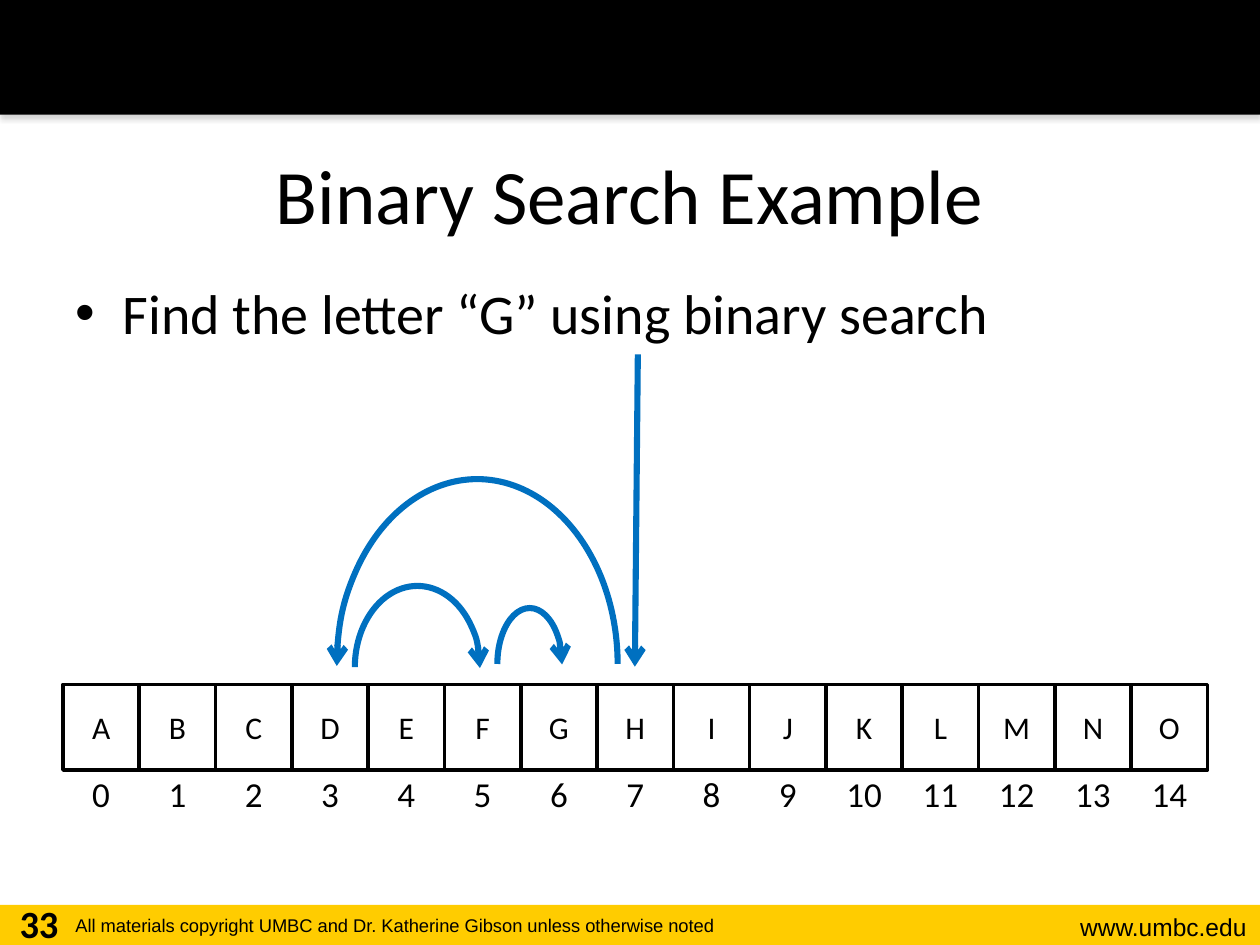
import lxml.etree
import pptx
import pptx.dml.color
import pptx.enum.shapes
import pptx.enum.text
import pptx.oxml
import pptx.oxml.ns
import pptx.util

Pt = pptx.util.Pt
Shape = pptx.enum.shapes.MSO_SHAPE
Align = pptx.enum.text.PP_ALIGN
Anchor = pptx.enum.text.MSO_ANCHOR

BLACK, WHITE, GOLD, BLUE = "000000", "FFFFFF", "FFCC00", "0070C0"
LETTERS = "ABCDEFGHIJKLMNO"
ROW_LEFT, CELL_WIDTH, CELL_HEIGHT = 36, 43.6, 49
LETTER_TOP, INDEX_TOP = 391, 429.1
ARC_ANGLES = (108.06, 0.44)


def color(value):
    return pptx.dml.color.RGBColor.from_string(value)


def add_xml(parent, tag, **attributes):
    return lxml.etree.SubElement(parent, pptx.oxml.ns.qn(tag), attributes)


def write(shape, text, size, font="Calibri", align=Align.LEFT,
          anchor=Anchor.TOP, bold=False):
    frame = shape.text_frame
    frame.word_wrap = True
    frame.vertical_anchor = anchor
    para = frame.paragraphs[0]
    para.text = text
    para.alignment = align
    para.font.size = Pt(size)
    para.font.name = font
    para.font.bold = bold
    para.font.color.rgb = color(BLACK)
    return para


def add_text(page, bounds, text, size, **style):
    box = page.shapes.add_textbox(*map(Pt, bounds))
    return write(box, text, size, **style)


def add_rectangle(page, bounds, fill, outline=None):
    rectangle = page.shapes.add_shape(Shape.RECTANGLE, *map(Pt, bounds))
    rectangle.shadow.inherit = False
    rectangle.fill.solid()
    rectangle.fill.fore_color.rgb = color(fill)
    if outline:
        rectangle.line.color.rgb = color(outline)
        rectangle.line.width = Pt(2)
    else:
        rectangle.line.fill.background()
    return rectangle


def add_banner(page):
    banner = add_rectangle(page, (0, 0, 720, 65.5), BLACK)
    effects = banner._element.spPr.find(pptx.oxml.ns.qn("a:effectLst"))
    shadow = add_xml(effects, "a:outerShdw", blurRad=str(Pt(3.1)),
                     dist=str(Pt(1.8)), dir="5400000", rotWithShape="0")
    tint = add_xml(shadow, "a:srgbClr", val="808080")
    add_xml(tint, "a:alpha", val="35000")


def add_footer(page):
    add_rectangle(page, (0, 517, 720, 23), GOLD)
    add_text(page, (576, 517.5, 143.5, 24.5), "www.umbc.edu", 14,
             font="Arial", align=Align.RIGHT)
    add_text(page, (36, 519, 472, 21),
             "All materials copyright UMBC and Dr. Katherine Gibson "
             "unless otherwise noted", 10.5, font="Arial")
    add_text(page, (0, 511, 44.6, 29), "33", 22, align=Align.CENTER, bold=True)


def add_title(page, text):
    title = page.shapes.title
    title.left, title.top, title.width, title.height = map(
        Pt, (36, 65.5, 648, 90))
    write(title, text, 44, align=Align.CENTER, anchor=Anchor.MIDDLE)


def add_bullet(page, text):
    box = page.shapes.add_textbox(*map(Pt, (36, 155.5, 648, 356)))
    properties = box.text_frame.paragraphs[0]._p.get_or_add_pPr()
    properties.set("marL", str(Pt(27)))
    properties.set("indent", str(Pt(-27)))
    add_xml(properties, "a:buFont", typeface="Arial")
    add_xml(properties, "a:buChar", char="•")
    write(box, text, 32)


def add_cells(page, labels, top, size, outline):
    for column, label in enumerate(labels):
        left = ROW_LEFT + column * CELL_WIDTH
        cell = add_rectangle(
            page, (left, top, CELL_WIDTH, CELL_HEIGHT), WHITE, outline)
        cell.text_frame.margin_left = cell.text_frame.margin_right = 0
        write(cell, label, size, align=Align.CENTER, anchor=Anchor.MIDDLE)


def style_arrow(shape):
    shape.line.color.rgb = color(BLUE)
    shape.line.width = Pt(3.5)
    add_xml(shape.line._get_or_add_ln(), "a:tailEnd", type="arrow")


def add_jump(page, bounds, leftward=False):
    """Draw an arched arrow from one probed cell to the next."""
    arc = page.shapes.add_shape(Shape.ARC, *map(Pt, bounds))
    arc.shadow.inherit = False
    arc.fill.background()
    for position, angle in enumerate(ARC_ANGLES):
        arc.adjustments[position] = angle
    if leftward:
        arc._element.spPr.xfrm.set("flipH", "1")
    style_arrow(arc)


def add_first_probe(page):
    arrow = page.shapes.add_connector(
        pptx.enum.shapes.MSO_CONNECTOR.STRAIGHT,
        *map(Pt, (364.5, 202.5, 362.8, 381)))
    style_arrow(arrow)
    add_xml(arrow._element.spPr, "a:effectLst")


def main():
    deck = pptx.Presentation()
    deck.slide_width, deck.slide_height = Pt(720), Pt(540)
    page = deck.slides.add_slide(deck.slide_layouts[5])

    add_banner(page)
    add_footer(page)
    add_title(page, "Binary Search Example")
    add_bullet(page, "Find the letter “G” using binary search")
    add_cells(page, map(str, range(len(LETTERS))), INDEX_TOP, 20, WHITE)
    add_cells(page, LETTERS, LETTER_TOP, 18, BLACK)
    add_jump(page, (192.5, 273.8, 160.5, 211.5), leftward=True)
    add_first_probe(page)
    add_jump(page, (202.8, 334.8, 71.5, 93))
    add_jump(page, (284.2, 347.5, 37, 64))

    deck.save("out.pptx")


if __name__ == "__main__":
    main()
